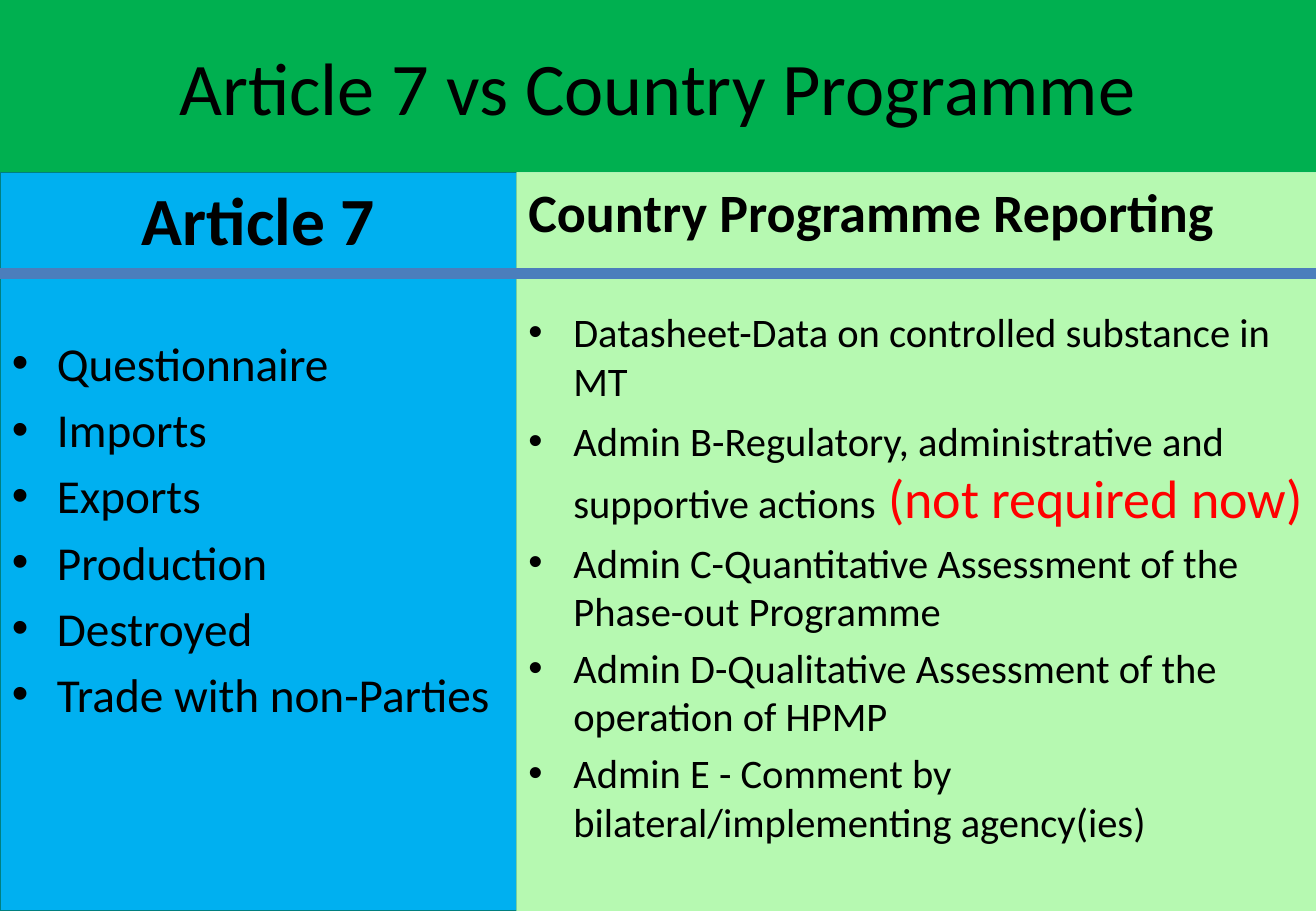
from dataclasses import dataclass

from lxml import etree
from pptx import Presentation
from pptx.dml.color import RGBColor
from pptx.enum.shapes import MSO_CONNECTOR, MSO_SHAPE
from pptx.enum.text import MSO_ANCHOR, PP_ALIGN
from pptx.oxml.ns import qn
from pptx.util import Inches, Pt

LINE = MSO_CONNECTOR.STRAIGHT
RECT = MSO_SHAPE.RECTANGLE
TOP, MIDDLE = MSO_ANCHOR.TOP, MSO_ANCHOR.MIDDLE
LEFT, CENTER = PP_ALIGN.LEFT, PP_ALIGN.CENTER


@dataclass(frozen=True)
class Theme:
    font: str = "Calibri"
    text: str = "000000"
    alert: str = "FF0000"
    banner: str = "00B050"
    article: str = "00B0F0"
    article_edge: str = "008080"
    country: str = "B6F9B1"
    rule: str = "4B7EBC"
    title_size: int = 44
    article_head: int = 40
    article_body: int = 28
    country_head: int = 32
    country_body: int = 24
    alert_size: int = 32


THEME = Theme()
WIDTH, HEIGHT = 10.83, 7.5
BANNER_H = 1.42
SPLIT, COUNTRY_W = 4.25, 6.59
RULE_Y, RULE_SPLIT = 2.25, 4.17
INDENT = Inches(0.37)
REMARK_GAP = 6.8

ARTICLE_ITEMS = ["Questionnaire", "Imports", "Exports", "Production",
                 "Destroyed", "Trade with non-Parties"]
# An item is its text, or a pair of text and highlighted remark
COUNTRY_ITEMS = [
    "Datasheet-Data on controlled substance in MT",
    ("Admin B-Regulatory, administrative and supportive actions",
     " (not required now)"),
    "Admin C-Quantitative Assessment of the Phase-out Programme",
    "Admin D-Qualitative Assessment of the operation of HPMP",
    "Admin E - Comment by bilateral/implementing agency(ies)",
]


def color(value):
    return RGBColor.from_string(value)


def add_run(p, text, size, bold=False, ink=THEME.text):
    r = p.add_run()
    r.text = text
    r.font.name = THEME.font
    r.font.size = Pt(size)
    r.font.bold = bold
    r.font.color.rgb = color(ink)


def add_bullet(p):
    pPr = p._p.get_or_add_pPr()
    pPr.set("marL", str(INDENT))
    pPr.set("indent", str(-INDENT))
    etree.SubElement(pPr, qn("a:buFont")).set("typeface", "Arial")
    etree.SubElement(pPr, qn("a:buChar")).set("char", "•")


def add_title(s, text):
    sp = s.shapes.title
    sp.left, sp.top = Inches(0), Inches(0)
    sp.width, sp.height = Inches(WIDTH), Inches(BANNER_H)
    sp.fill.solid()
    sp.fill.fore_color.rgb = color(THEME.banner)
    tf = sp.text_frame
    tf.vertical_anchor = MIDDLE
    p = tf.paragraphs[0]
    p.alignment = CENTER
    add_run(p, text, THEME.title_size)


def add_panel(s, left, width, fill, edge, head, head_size, head_align,
              items, size, first_gap, gap):
    sp = s.shapes.add_shape(RECT, Inches(left), Inches(BANNER_H),
                            Inches(width), Inches(HEIGHT - BANNER_H))
    sp.shadow.inherit = False
    sp.fill.solid()
    sp.fill.fore_color.rgb = color(fill)
    if edge:
        sp.line.color.rgb = color(edge)
        sp.line.width = Pt(0.75)
    else:
        sp.line.fill.background()

    tf = sp.text_frame
    tf.word_wrap = True
    tf.vertical_anchor = TOP
    p = tf.paragraphs[0]
    p.alignment = head_align
    add_run(p, head, head_size, bold=True)

    for i, item in enumerate(items):
        text, remark = (item, None) if isinstance(item, str) else item
        p = tf.add_paragraph()
        p.alignment = LEFT
        p.space_before = Pt(first_gap if i == 0 else
                            REMARK_GAP if remark else gap)
        add_bullet(p)
        add_run(p, text, size)
        if remark:
            add_run(p, remark, THEME.alert_size, ink=THEME.alert)


def add_rule(s, x1, x2):
    y = Inches(RULE_Y)
    ln = s.shapes.add_connector(LINE, Inches(x1), y, Inches(x2), y)
    ln.line.color.rgb = color(THEME.rule)
    ln.line.width = Pt(6.75)
    etree.SubElement(ln._element.spPr, qn("a:effectLst"))


def main():
    prs = Presentation()
    prs.slide_width, prs.slide_height = Inches(WIDTH), Inches(HEIGHT)
    s = prs.slides.add_slide(prs.slide_layouts[5])

    # Title banner
    add_title(s, "Article 7 vs Country Programme")

    # Two panels to compare
    add_panel(s, 0, SPLIT, THEME.article, THEME.article_edge,
              "Article 7", THEME.article_head, CENTER,
              ARTICLE_ITEMS, THEME.article_body, first_gap=44.4, gap=5.6)
    add_panel(s, SPLIT, COUNTRY_W, THEME.country, None,
              "Country Programme Reporting", THEME.country_head, LEFT,
              COUNTRY_ITEMS, THEME.country_body, first_gap=38, gap=4.8)

    # Rule under the panel headings
    add_rule(s, 0, RULE_SPLIT)
    add_rule(s, RULE_SPLIT, WIDTH)

    prs.save("out.pptx")


if __name__ == "__main__":
    main()
